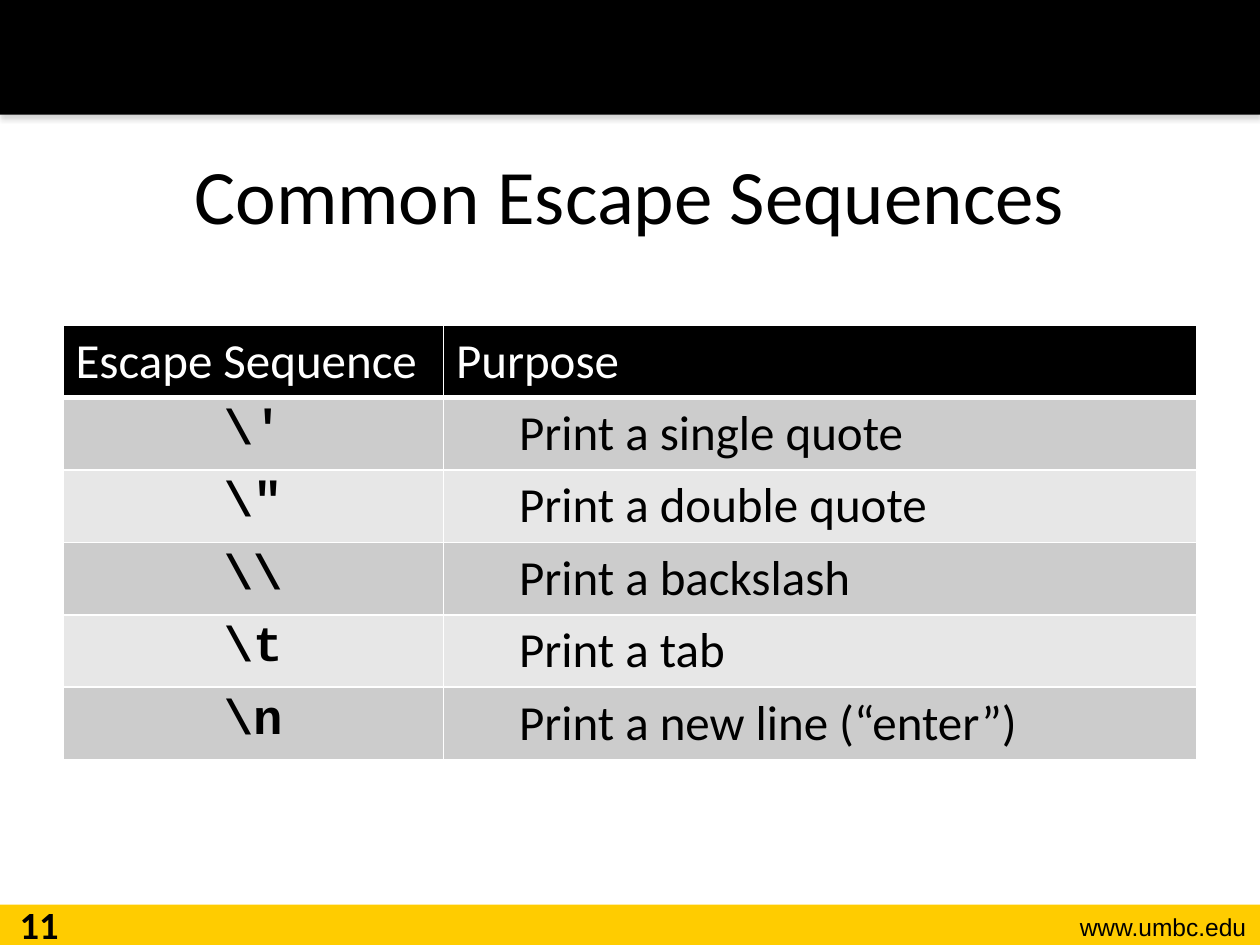
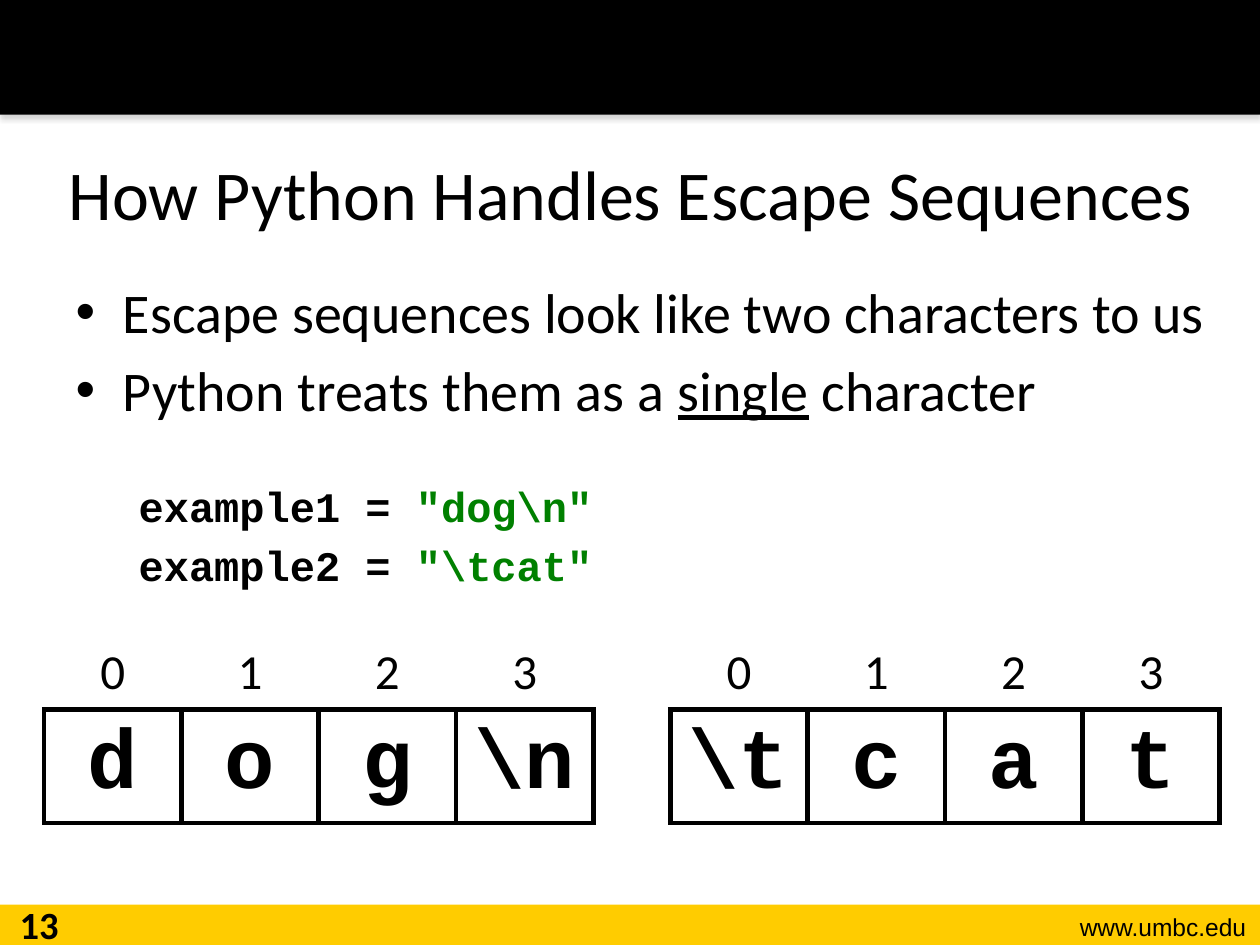
from lxml.etree import SubElement
from pptx import Presentation
from pptx.dml.color import RGBColor
from pptx.enum.shapes import MSO_SHAPE
from pptx.enum.text import MSO_ANCHOR, MSO_AUTO_SIZE, PP_ALIGN
from pptx.oxml import parse_xml
from pptx.oxml.ns import nsdecls, qn
from pptx.util import Inches, Pt

BLACK = RGBColor(0x00, 0x00, 0x00)
WHITE = RGBColor(0xFF, 0xFF, 0xFF)
GOLD = RGBColor(0xFF, 0xCC, 0x00)
GREEN = RGBColor(0x00, 0x80, 0x00)
DARK_ROW = RGBColor(0xCC, 0xCC, 0xCC)
LIGHT_ROW = RGBColor(0xE7, 0xE7, 0xE7)

SANS, MONO = "Calibri", "Courier New"
TITLE_ONLY, TITLE_AND_BODY = 5, 1
SITE = "www.umbc.edu"

HEADERS = ("Escape Sequence", "Purpose")
ESCAPES = [
    (r"\'", "Print a single quote"),
    (r"\"", "Print a double quote"),
    (r"\\", "Print a backslash"),
    (r"\t", "Print a tab"),
    (r"\n", "Print a new line (“enter”)"),
]
BULLETS = [
    [("Escape sequences look like two characters to us", {})],
    [("Python treats them as a ", {}), ("single", {"underline": True}), (" character", {})],
]
CODE = [("example1 = ", r'"dog\n"'), ("example2 = ", r'"\tcat"')]
CODE_SPACE = (33, 4.8)
STRINGS = [(0.35, ["d", "o", "g", r"\n"]), (5.32, [r"\t", "c", "a", "t"])]

CELL_TEXT = {"name": SANS, "size": Pt(28), "bold": False}
CELL_CODE = {"name": MONO, "size": Pt(28), "bold": True}
BOX_CODE = {"name": MONO, "size": Pt(48), "bold": True}
BULLET_TEXT = {"name": SANS, "size": Pt(32)}
CODE_TEXT = {"name": MONO, "size": Pt(24), "bold": True}


def add_run(p, text, style, color=BLACK):
    r = p.add_run()
    r.text = text
    for name, value in style.items():
        setattr(r.font, name, value)
    r.font.color.rgb = color


def place(sp, left, top, width, height):
    sp.left, sp.top, sp.width, sp.height = map(Inches, (left, top, width, height))


def add_band(slide, top, height, color):
    sp = slide.shapes.add_shape(MSO_SHAPE.RECTANGLE, 0, Inches(top), Inches(10), Inches(height))
    sp.shadow.inherit = False
    sp.fill.solid()
    sp.fill.fore_color.rgb = color
    sp.line.fill.background()
    return sp


def add_soft_shadow(sp):
    effects = sp._element.spPr.find(qn("a:effectLst"))
    effects.append(parse_xml(
        f'<a:outerShdw {nsdecls("a")} blurRad="{Pt(3.1)}" dist="{Pt(1.8)}" dir="5400000" '
        'rotWithShape="0"><a:srgbClr val="808080"><a:alpha val="35000"/></a:srgbClr></a:outerShdw>'))


def add_label(slide, box, text, style, align):
    sp = slide.shapes.add_textbox(*map(Inches, box))
    tf = sp.text_frame
    tf.word_wrap = True
    p = tf.paragraphs[0]
    p.alignment = align
    add_run(p, text, style)


def add_slide(prs, layout, title, title_box, title_size, number):
    """Add a slide with the shared bands, footer and title."""
    slide = prs.slides.add_slide(prs.slide_layouts[layout])
    add_band(slide, 7.18, 0.32, GOLD)
    add_soft_shadow(add_band(slide, 0, 0.91, BLACK))
    add_label(slide, (8, 7.19, 1.99, 0.34), SITE, {"name": "Arial", "size": Pt(14)}, PP_ALIGN.RIGHT)
    add_label(slide, (0, 7.1, 0.62, 0.4), str(number),
              {"name": SANS, "size": Pt(22), "bold": True}, PP_ALIGN.CENTER)
    sp = slide.shapes.title
    place(sp, *title_box)
    tf = sp.text_frame
    tf.auto_size = MSO_AUTO_SIZE.NONE
    tf.vertical_anchor = MSO_ANCHOR.MIDDLE
    p = tf.paragraphs[0]
    p.alignment = PP_ALIGN.CENTER
    add_run(p, title, {"name": SANS, "size": Pt(title_size)})
    return slide


def add_plain_table(slide, left, top, widths, heights):
    width, height = sum(widths), sum(heights)
    frame = slide.shapes.add_table(len(heights), len(widths), Inches(left), Inches(top),
                                   Inches(width), Inches(height))
    table = frame.table
    table.first_row = table.horz_banding = False
    for col, w in zip(table.columns, widths):
        col.width = Inches(w)
    for row, h in zip(table.rows, heights):
        row.height = Inches(h)
    return table


def fill_cell(cell, text, style, color=BLACK, fill=None, align=PP_ALIGN.LEFT,
              anchor=MSO_ANCHOR.TOP, line=WHITE, widths=(1, 1, 1, 1)):
    """Write and format a cell; widths are its left, right, top and bottom borders."""
    cell.vertical_anchor = anchor
    p = cell.text_frame.paragraphs[0]
    p.alignment = align
    add_run(p, text, style, color)
    tcPr = cell._tc.get_or_add_tcPr()
    for side, width in zip("LRTB", widths):
        ln = SubElement(tcPr, qn(f"a:ln{side}"), w=str(Pt(width)))
        if width:
            solid = SubElement(ln, qn("a:solidFill"))
            SubElement(solid, qn("a:srgbClr"), val=str(line))
        else:
            SubElement(ln, qn("a:noFill"))
    if fill is None:
        cell.fill.background()
    else:
        cell.fill.solid()
        cell.fill.fore_color.rgb = fill


def build_escape_table(prs):
    slide = add_slide(prs, TITLE_ONLY, "Common Escape Sequences", (0.5, 0.91, 9, 1.25), 44, 11)
    rows = len(ESCAPES) + 1
    table = add_plain_table(slide, 0.5, 2.58, (3.02, 5.98), [3.45 / rows] * rows)
    for c, header in enumerate(HEADERS):
        fill_cell(table.cell(0, c), header, CELL_TEXT, WHITE, BLACK, widths=(1, 1, 1, 3))
    for r, (sequence, purpose) in enumerate(ESCAPES, 1):
        fill = DARK_ROW if r % 2 else LIGHT_ROW
        fill_cell(table.cell(r, 0), sequence, CELL_CODE, fill=fill, align=PP_ALIGN.CENTER)
        cell = table.cell(r, 1)
        cell.margin_left = Inches(0.6)
        fill_cell(cell, purpose, CELL_TEXT, fill=fill)


def add_body(slide):
    body = slide.placeholders[1]
    place(body, 0.5, 2.15, 9.18, 4.55)
    tf = body.text_frame
    tf.auto_size = MSO_AUTO_SIZE.NONE
    for i, runs in enumerate(BULLETS):
        p = tf.add_paragraph() if i else tf.paragraphs[0]
        if i == 0:
            p.space_before = Pt(0)
        for text, extra in runs:
            add_run(p, text, BULLET_TEXT | extra)
    for (name, value), space in zip(CODE, CODE_SPACE):
        p = tf.add_paragraph()
        p.level = 1
        pPr = p._p.get_or_add_pPr()
        pPr.set("marL", str(Inches(0.5)))
        pPr.set("indent", "0")
        SubElement(pPr, qn("a:buNone"))
        p.space_before = Pt(space)
        add_run(p, name, CODE_TEXT)
        add_run(p, value, CODE_TEXT, GREEN)


def build_handling(prs):
    slide = add_slide(prs, TITLE_AND_BODY, "How Python Handles Escape Sequences",
                      (0.32, 0.9, 9.37, 1.25), 40, 13)
    add_body(slide)
    for left, characters in STRINGS:
        table = add_plain_table(slide, left, 5.05, [1.09] * len(characters), (0.58, 0.86))
        for c, character in enumerate(characters):
            fill_cell(table.cell(0, c), str(c), CELL_TEXT, align=PP_ALIGN.CENTER,
                      anchor=MSO_ANCHOR.BOTTOM, line=BLACK, widths=(0, 0, 0, 3))
            fill_cell(table.cell(1, c), character, BOX_CODE, fill=WHITE, align=PP_ALIGN.CENTER,
                      anchor=MSO_ANCHOR.MIDDLE, line=BLACK, widths=(3, 3, 3, 3))


def main():
    prs = Presentation()
    prs.slide_width, prs.slide_height = Inches(10), Inches(7.5)
    build_escape_table(prs)
    build_handling(prs)
    prs.save("out.pptx")


if __name__ == "__main__":
    main()
